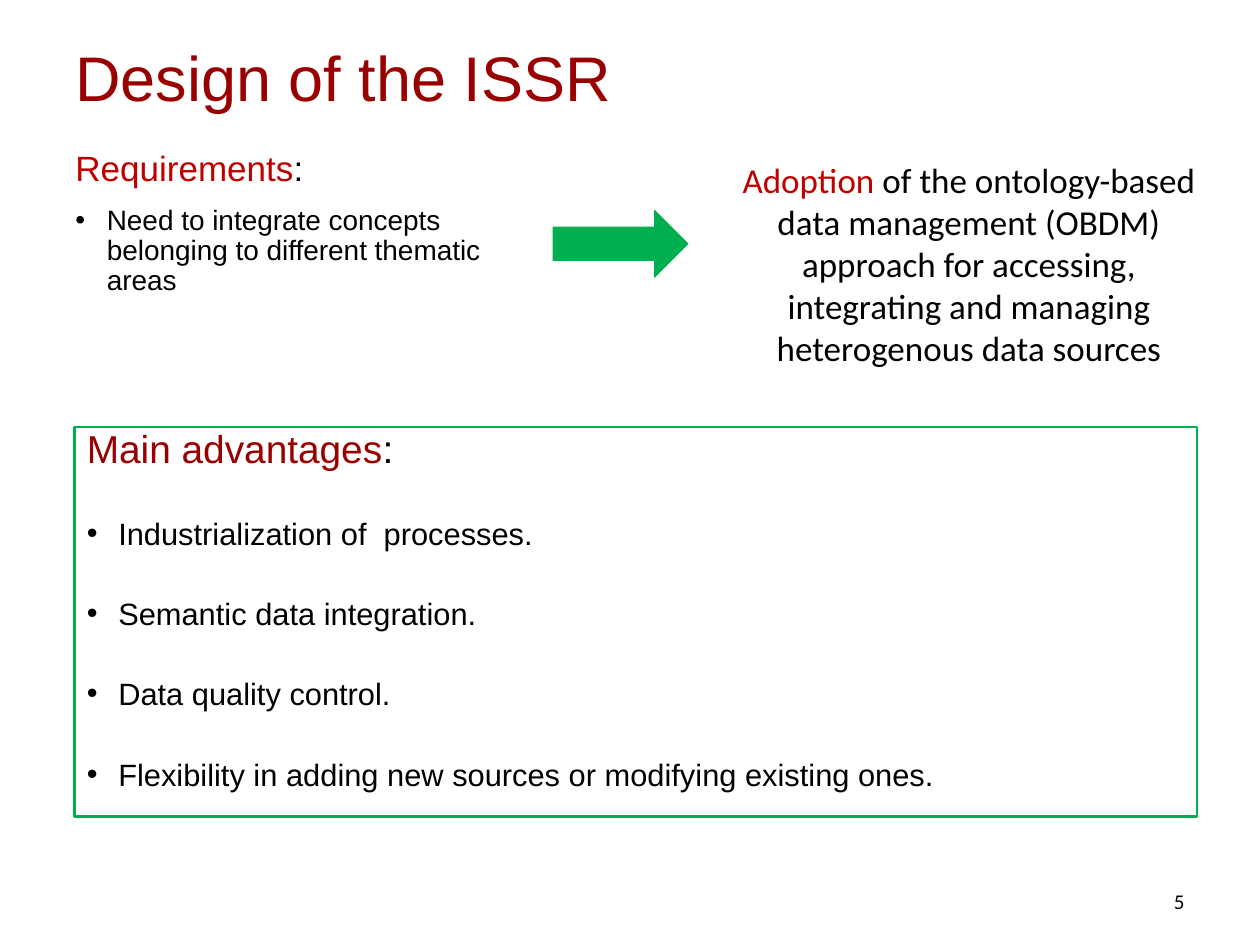
from dataclasses import dataclass
from typing import Any

from lxml import etree
from pptx import Presentation, util as u
from pptx.dml.color import RGBColor
from pptx.enum import shapes, text
from pptx.oxml import ns

BLACK = RGBColor(0x00, 0x00, 0x00)
DARK_RED = RGBColor(0x99, 0x00, 0x00)
RED = RGBColor(0xC0, 0x00, 0x00)
GREEN = RGBColor(0x00, 0xB0, 0x50)
ALIGN = text.PP_ALIGN
MIDDLE = text.MSO_ANCHOR.MIDDLE


@dataclass
class SlideBuilder:
    """Hold the style and the current slide, and add each kind of element."""

    page: Any
    font: str = "Arial"
    indent: float = 0.25

    def place(self, bounds):
        return [u.Inches(length) for length in bounds]

    def text_box(self, bounds, anchor=text.MSO_ANCHOR.TOP):
        box = self.page.shapes.add_textbox(*self.place(bounds))
        box.text_frame.word_wrap = True
        box.text_frame.vertical_anchor = anchor
        return box

    def shape(self, kind, bounds, line_width, fill=None, rotation=0):
        shape = self.page.shapes.add_shape(kind, *self.place(bounds))
        shape.shadow.inherit = False
        shape.rotation = rotation
        if fill is None:
            shape.fill.background()
        else:
            shape.fill.solid()
            shape.fill.fore_color.rgb = fill
        shape.line.color.rgb = GREEN
        shape.line.width = u.Pt(line_width)
        shape.text_frame.word_wrap = True
        shape.text_frame.vertical_anchor = text.MSO_ANCHOR.TOP
        return shape

    def paragraph(self, box, spans, size, font=None, bullet=False, **layout):
        frame = box.text_frame
        para = frame.paragraphs[0]
        if para.runs:
            para = frame.add_paragraph()
        if bullet:
            self.bullet(para)
        for name, value in {"alignment": ALIGN.LEFT, **layout}.items():
            setattr(para, name, value)
        for words, color in spans:
            span = para.add_run()
            span.text = words
            style = {"name": font or self.font, "size": u.Pt(size)}
            for name, value in style.items():
                setattr(span.font, name, value)
            span.font.color.rgb = color

    def bullet(self, para):
        properties = para._p.get_or_add_pPr()
        margin = u.Inches(self.indent)
        properties.set("marL", str(margin))
        properties.set("indent", str(-margin))
        face = etree.SubElement(properties, ns.qn("a:buFont"))
        face.set("typeface", self.font)
        mark = etree.SubElement(properties, ns.qn("a:buChar"))
        mark.set("char", "•")


def main():
    deck = Presentation()
    deck.slide_width, deck.slide_height = u.Inches(10), u.Inches(7.5)
    builder = SlideBuilder(deck.slides.add_slide(deck.slide_layouts[6]))

    title = builder.text_box((0.5, 0.3, 9, 0.69), MIDDLE)
    builder.paragraph(title, [("Design of the ISSR", DARK_RED)], 36, line_spacing=0.9)

    requirements = builder.text_box((0.5, 1.15, 3.87, 1.88))
    builder.paragraph(requirements, [("Requirements", RED), (":", BLACK)], 20,
                      line_spacing=0.9)
    need = "Need to integrate concepts belonging to different thematic areas"
    builder.paragraph(requirements, [(need, BLACK)], 16, bullet=True,
                      line_spacing=0.9, space_before=u.Pt(10))

    number = builder.text_box((7.17, 6.95, 2.33, 0.4), MIDDLE)
    builder.paragraph(number, [("5", BLACK)], 12, "Calibri", alignment=ALIGN.RIGHT)

    builder.shape(shapes.MSO_SHAPE.DOWN_ARROW, (4.66, 1.4, 0.53, 1.07), 0.5,
                  fill=GREEN, rotation=270)

    adoption = builder.text_box((5.73, 1.21, 3.92, 1.78))
    approach = ("of the ontology-based data management (OBDM) approach for accessing, "
                "integrating and managing heterogenous data sources")
    builder.paragraph(adoption, [("Adoption ", RED), (approach, BLACK)], 20, "Calibri",
                      alignment=ALIGN.CENTER)

    advantages = builder.shape(shapes.MSO_SHAPE.RECTANGLE, (0.59, 3.39, 8.91, 3.09), 1.5)
    builder.paragraph(advantages, [("Main advantages", DARK_RED), (":", BLACK)], 22.2,
                      line_spacing=0.8)
    for advantage in (
        "Industrialization of  processes.",
        "Semantic data integration.",
        "Data quality control.",
        "Flexibility in adding new sources or modifying existing ones.",
    ):
        builder.paragraph(advantages, [(advantage, BLACK)], 17.6, bullet=True,
                          line_spacing=0.8, space_before=u.Pt(29))

    deck.save("out.pptx")


if __name__ == "__main__":
    main()
